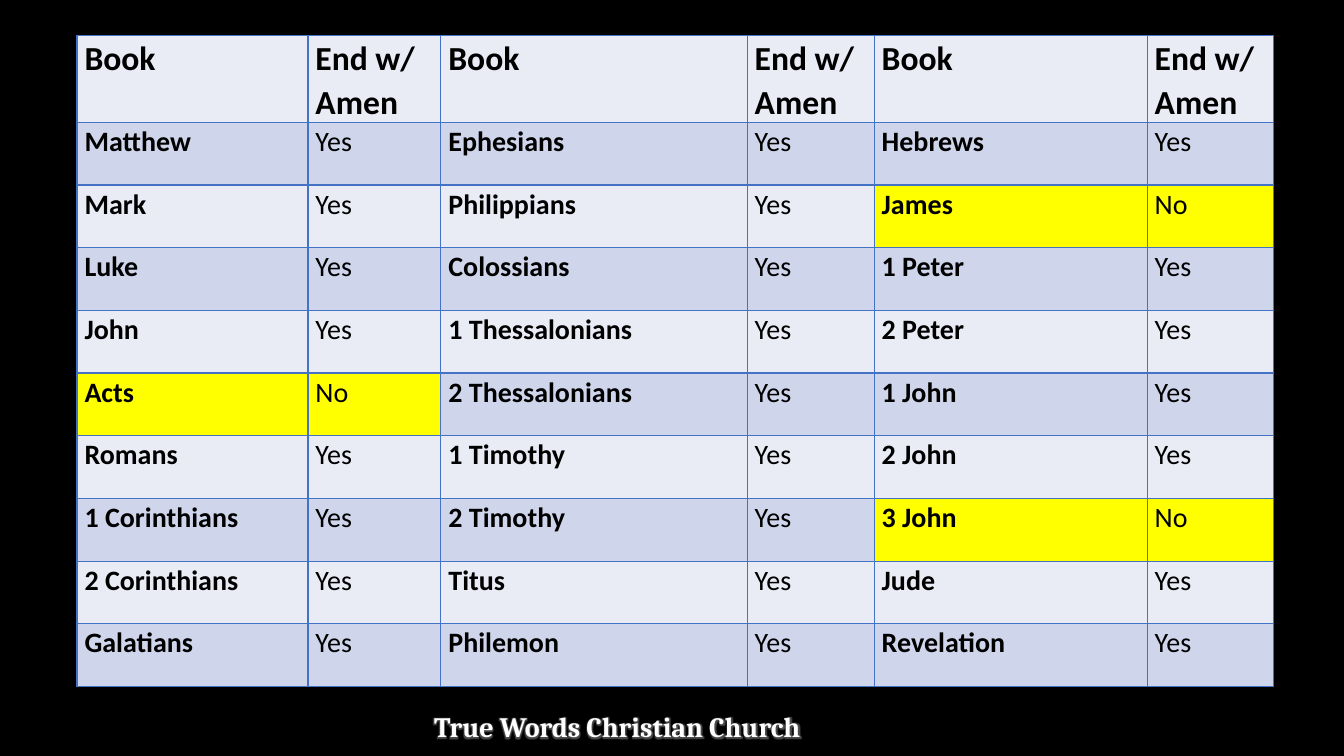
"""Build a slide listing which New Testament books end with Amen."""
import pptx
import pptx.dml.color
import pptx.enum.text
import pptx.util
import lxml.etree

Cm = pptx.util.Cm
HEADS = ["Book", "End w/ Amen"]
BOOKS = [
    ["Matthew", "Mark", "Luke", "John", "Acts", "Romans",
     "1 Corinthians", "2 Corinthians", "Galatians"],
    ["Ephesians", "Philippians", "Colossians", "1 Thessalonians", "2 Thessalonians",
     "1 Timothy", "2 Timothy", "Titus", "Philemon"],
    ["Hebrews", "James", "1 Peter", "2 Peter", "1 John", "2 John",
     "3 John", "Jude", "Revelation"],
]
NO_AMEN = {"Acts", "James", "3 John"}
FOOTER = "True Words Christian Church"
WIDTHS = [5.82, 3.35, 7.72, 3.2, 6.88, 3.18]
HEAD_H, ROW_H = 2.18, 1.58
BANDS = ["E9EBF5", "CFD5EA"]
MARK, EDGE = "FFFF00", "4472C4"
NS = "http://schemas.openxmlformats.org/drawingml/2006/main"


def color(code):
    return pptx.dml.color.RGBColor.from_string(code)


def fill(part, code):
    part.fill.solid()
    part.fill.fore_color.rgb = color(code)


def write(frame, text, size=20, bold=True, ink="000000", face="Calibri", space=None):
    para = frame.paragraphs[0]
    para.line_spacing = space
    run = para.add_run()
    run.text = text
    font = run.font
    font.size, font.bold, font.name = pptx.util.Pt(size), bold, face
    font.color.rgb = color(ink)
    return run


def border(cell):
    props = cell._tc.get_or_add_tcPr()
    for spot, side in enumerate(["lnL", "lnR", "lnT", "lnB"]):
        line = lxml.etree.Element(f"{{{NS}}}{side}", w=str(pptx.util.Pt(1)))
        solid = lxml.etree.SubElement(line, f"{{{NS}}}solidFill")
        lxml.etree.SubElement(solid, f"{{{NS}}}srgbClr", val=EDGE)
        props.insert(spot, line)


def glow(run, code, size):
    effects = lxml.etree.Element(f"{{{NS}}}effectLst")
    halo = lxml.etree.SubElement(effects, f"{{{NS}}}glow", rad=str(pptx.util.Pt(size)))
    shade = lxml.etree.SubElement(halo, f"{{{NS}}}srgbClr", val=code)
    lxml.etree.SubElement(shade, f"{{{NS}}}alpha", val="60000")
    run.font.fill._xPr.find(f"{{{NS}}}solidFill").addnext(effects)


def put(cell, text, back, size, bold):
    cell.margin_left = cell.margin_right = Cm(0.19)
    cell.margin_top = cell.margin_bottom = 0
    fill(cell, back)
    border(cell)
    write(cell.text_frame, text, size=size, bold=bold, space=1.07)


def main():
    deck = pptx.Presentation()
    deck.slide_width, deck.slide_height = Cm(33.87), Cm(19.05)
    slide = deck.slides.add_slide(deck.slide_layouts[6])
    fill(slide.background, "000000")

    box = slide.shapes.add_textbox(Cm(10.69), Cm(17.75), Cm(11.4), Cm(1.11))
    box.text_frame.word_wrap = False
    box.text_frame.auto_size = pptx.enum.text.MSO_AUTO_SIZE.SHAPE_TO_FIT_TEXT
    glow(write(box.text_frame, FOOTER, ink="FFFFFF", face="Cambria"), "808080", 4)

    count = len(BOOKS[0])
    table = slide.shapes.add_table(
        count + 1, len(WIDTHS), Cm(1.94), Cm(0.9),
        Cm(sum(WIDTHS)), Cm(HEAD_H + count * ROW_H)).table
    for col, width in zip(table.columns, WIDTHS):
        col.width = Cm(width)
    for num, row in enumerate(table.rows):
        row.height = Cm(ROW_H if num else HEAD_H)

    for block, books in enumerate(BOOKS):
        for side, head in enumerate(HEADS):
            put(table.cell(0, 2 * block + side), head, BANDS[0], 24, True)
        for num, book in enumerate(books, 1):
            lacks = book in NO_AMEN
            back = MARK if lacks else BANDS[num % 2]
            put(table.cell(num, 2 * block), book, back, 20, True)
            put(table.cell(num, 2 * block + 1), "No" if lacks else "Yes", back, 20, False)
    deck.save("out.pptx")


if __name__ == "__main__":
    main()
